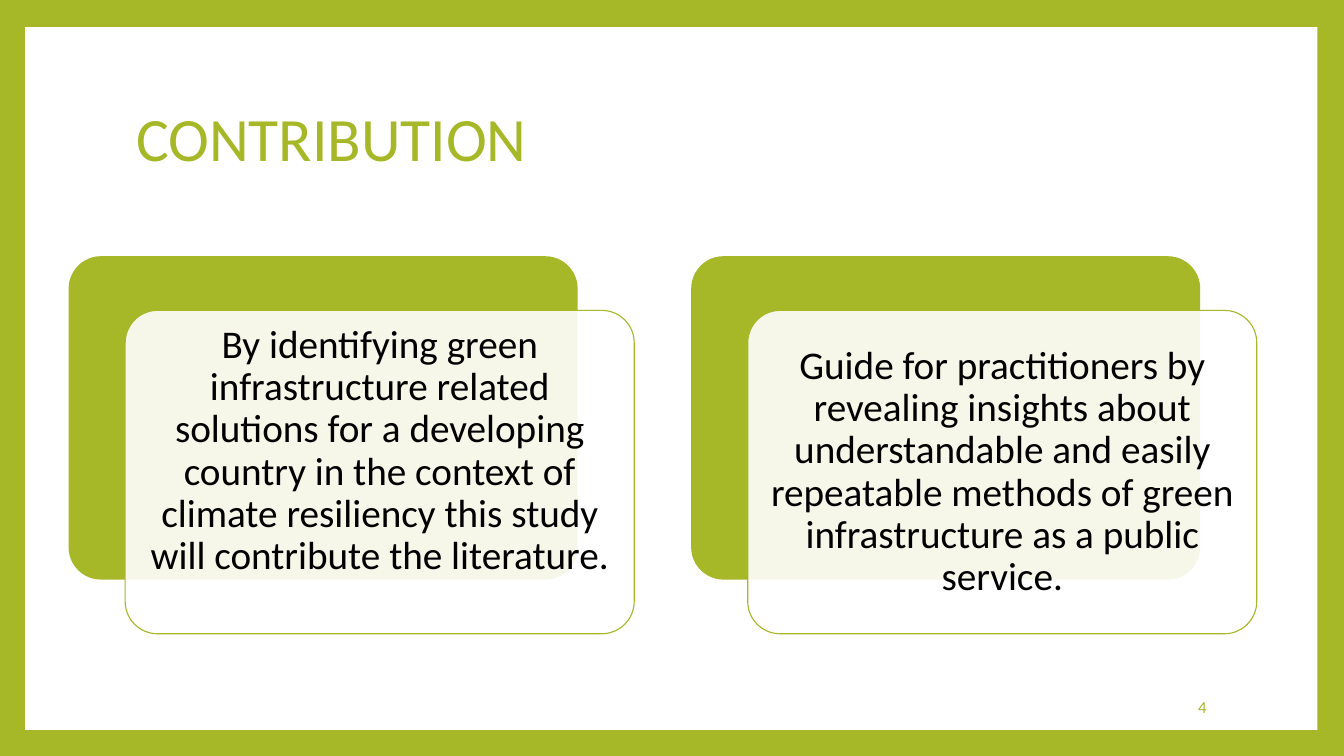
"""Build the Contribution slide with two layered cards in a green frame."""
import pptx
import pptx.util
import pptx.dml.color
import pptx.enum.shapes
import pptx.enum.text
import pptx.oxml.ns
import lxml.etree

Pt = pptx.util.Pt
Shape = pptx.enum.shapes.MSO_SHAPE
Align = pptx.enum.text.PP_ALIGN
GREEN, WHITE, BLACK = "A6B727", "FFFFFF", "000000"


def paint(color_format, color):
    color_format.rgb = pptx.dml.color.RGBColor.from_string(color)


def write(frame, text, size, color, align, spacing):
    frame.word_wrap = True
    frame.auto_size = pptx.enum.text.MSO_AUTO_SIZE.NONE
    frame.vertical_anchor = pptx.enum.text.MSO_ANCHOR.MIDDLE
    para = frame.paragraphs[0]
    para.alignment = align
    para.line_spacing = spacing
    span = para.add_run()
    span.text = text
    span.font.name = "Calibri"
    span.font.size = Pt(size)
    paint(span.font.color, color)


deck = pptx.Presentation()
deck.slide_width, deck.slide_height = Pt(960), Pt(540)
page = deck.slides.add_slide(deck.slide_layouts[5])
page.background.fill.solid()
paint(page.background.fill.fore_color, GREEN)

paper = page.shapes.add_shape(Shape.RECTANGLE, Pt(18), Pt(19.3), Pt(923), Pt(502))
paper.shadow.inherit = False
paper.fill.solid()
paint(paper.fill.fore_color, WHITE)
paper.line.fill.background()

title = page.shapes.title
title.left, title.top, title.width, title.height = Pt(90), Pt(48), Pt(778), Pt(106.5)
write(title.text_frame, "CONTRIBUTION", 44, GREEN, Align.LEFT, 0.9)
paper.element.addnext(title.element)

contributions = [
    ("By identifying green infrastructure related solutions for a developing country "
     "in the context of climate resiliency this study will contribute the literature.", 0, 30),
    ("Guide for practitioners by revealing insights about understandable and easily "
     "repeatable methods of green infrastructure as a public service.", 9, 9),
]
card_top, card_width, card_height = 183, 363.6, 231
for index, (text, inset_top, inset_bottom) in enumerate(contributions):
    left = 49 + index * 444.7
    for color, shift_x, shift_y in ((GREEN, 0, 0), (WHITE, 40.4, 38.7)):
        card = page.shapes.add_shape(Shape.ROUNDED_RECTANGLE, Pt(left + shift_x),
                                     Pt(card_top + shift_y), Pt(card_width), Pt(card_height))
        card.adjustments[0] = 0.1
        card.shadow.inherit = False
        card.fill.solid()
        paint(card.fill.fore_color, color)
        if color == GREEN:
            card.line.fill.background()
        else:
            paint(card.line.color, GREEN)
            card.line.width = Pt(0.79)
            tint = card.element.spPr.find(pptx.oxml.ns.qn("a:solidFill"))[0]
            lxml.etree.SubElement(tint, pptx.oxml.ns.qn("a:alpha"), val="90000")

    box = page.shapes.add_textbox(Pt(left + 47.2), Pt(card_top + 45.5), Pt(350), Pt(217.5))
    frame = box.text_frame
    frame.margin_left = frame.margin_right = Pt(8.4)
    frame.margin_top, frame.margin_bottom = Pt(inset_top), Pt(inset_bottom)
    write(frame, text, 28, BLACK, Align.CENTER, 0.9)

number = page.shapes.add_textbox(Pt(734.4), Pt(490.3), Pt(134.6), Pt(28.8))
write(number.text_frame, "4", 12, GREEN, Align.RIGHT, 1.0)

deck.save("out.pptx")
